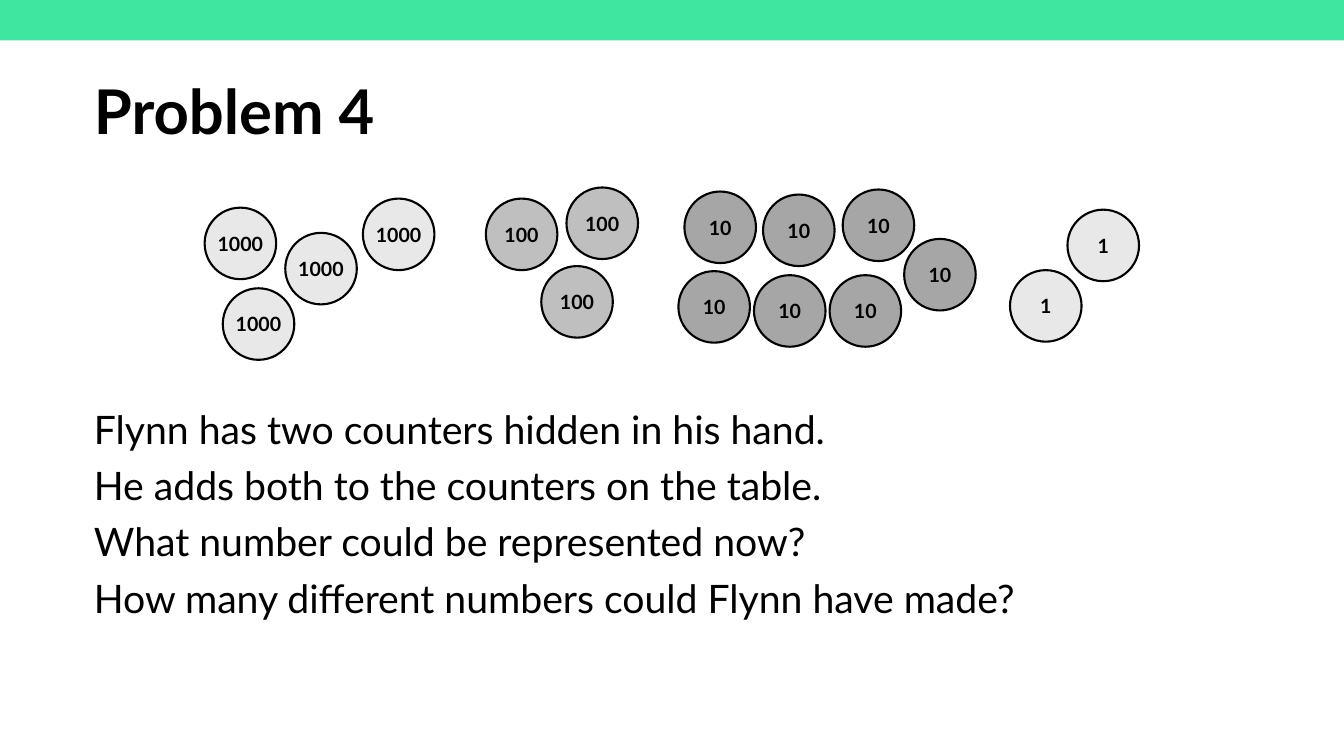
import pptx
import pptx.dml.color
import pptx.enum.shapes
import pptx.enum.text
import pptx.util

COLS, ROWS = 40, 22.5
CELL = pptx.util.Inches(13.333) / COLS
SIZE = 2.13  # counter diameter in cells
FONT = "Lato"
COLORS = {
    "band": "3FE6A0", "ink": "000000",
    "1000": "E8E8E8", "100": "BFBFBF", "10": "A6A6A6", "1": "E8E8E8",
}
# Left and top of each counter, in cells, by the value it shows
COUNTERS = {
    "1000": [(6.09, 6.18), (6.63, 8.58), (10.8, 5.91), (8.49, 6.93)],
    "100": [(14.46, 5.91), (16.11, 8.01 - 0.09), (16.86, 5.58)],
    "10": [(20.37, 5.7), (22.71, 5.79), (25.08, 5.64), (26.91, 7.11),
           (20.19, 8.07), (22.44, 8.19), (24.69, 8.19)],
    "1": [(30.06, 8.04), (31.77, 6.24)],
}
COUNTERS["100"][1] = (16.11, 7.92)
LINES = [
    "Flynn has two counters hidden in his hand.",
    "He adds both to the counters on the table.",
    "What number could be represented now?",
    "How many different numbers could Flynn have made?",
]


def cells(*counts):
    return [pptx.util.Emu(round(n * CELL)) for n in counts]


def color(name):
    return pptx.dml.color.RGBColor.from_string(COLORS[name])


def write(frame, lines, size, bold=False, align="LEFT", anchor="TOP",
          space=0, leading=None):
    frame.word_wrap = True
    frame.vertical_anchor = pptx.enum.text.MSO_ANCHOR[anchor]
    for i, line in enumerate(lines):
        para = frame.add_paragraph() if i else frame.paragraphs[0]
        para.alignment = pptx.enum.text.PP_ALIGN[align]
        para.space_before = pptx.util.Pt(space if i else 0)
        para.line_spacing = leading
        run = para.add_run()
        run.text = line
        run.font.name = FONT
        run.font.size = pptx.util.Pt(size)
        run.font.bold = bold
        run.font.color.rgb = color("ink")


def shape(slide, kind, box, fill):
    item = slide.shapes.add_shape(
        pptx.enum.shapes.MSO_SHAPE[kind], *cells(*box))
    item.shadow.inherit = False
    item.fill.solid()
    item.fill.fore_color.rgb = color(fill)
    item.line.fill.background()
    return item


def counter(slide, value, left, top):
    disc = shape(slide, "OVAL", (left, top, SIZE, SIZE), value)
    disc.line.color.rgb = color("ink")
    disc.line.width = pptx.util.Pt(1.5)
    frame = disc.text_frame
    frame.margin_left = frame.margin_right = 0
    frame.margin_top = frame.margin_bottom = 0
    write(frame, [value], 14, bold=True, align="CENTER", anchor="MIDDLE")


def textbox(slide, box, lines, size, **style):
    frame = slide.shapes.add_textbox(*cells(*box)).text_frame
    write(frame, lines, size, leading=0.9, **style)


def main():
    deck = pptx.Presentation()
    deck.slide_width, deck.slide_height = cells(COLS, ROWS)
    slide = deck.slides.add_slide(deck.slide_layouts[6])

    shape(slide, "RECTANGLE", (0, -0.06, COLS, 1.26), "band")
    textbox(slide, (2.5, 1.23, 34, 4.35), ["Problem 4"], 44,
            bold=True, anchor="MIDDLE")
    for value, places in COUNTERS.items():
        for left, top in places:
            counter(slide, value, left, top)
    textbox(slide, (2.5, 12.06, 34.5, 9.21), LINES, 28, space=10)

    deck.save("out.pptx")


if __name__ == "__main__":
    main()
